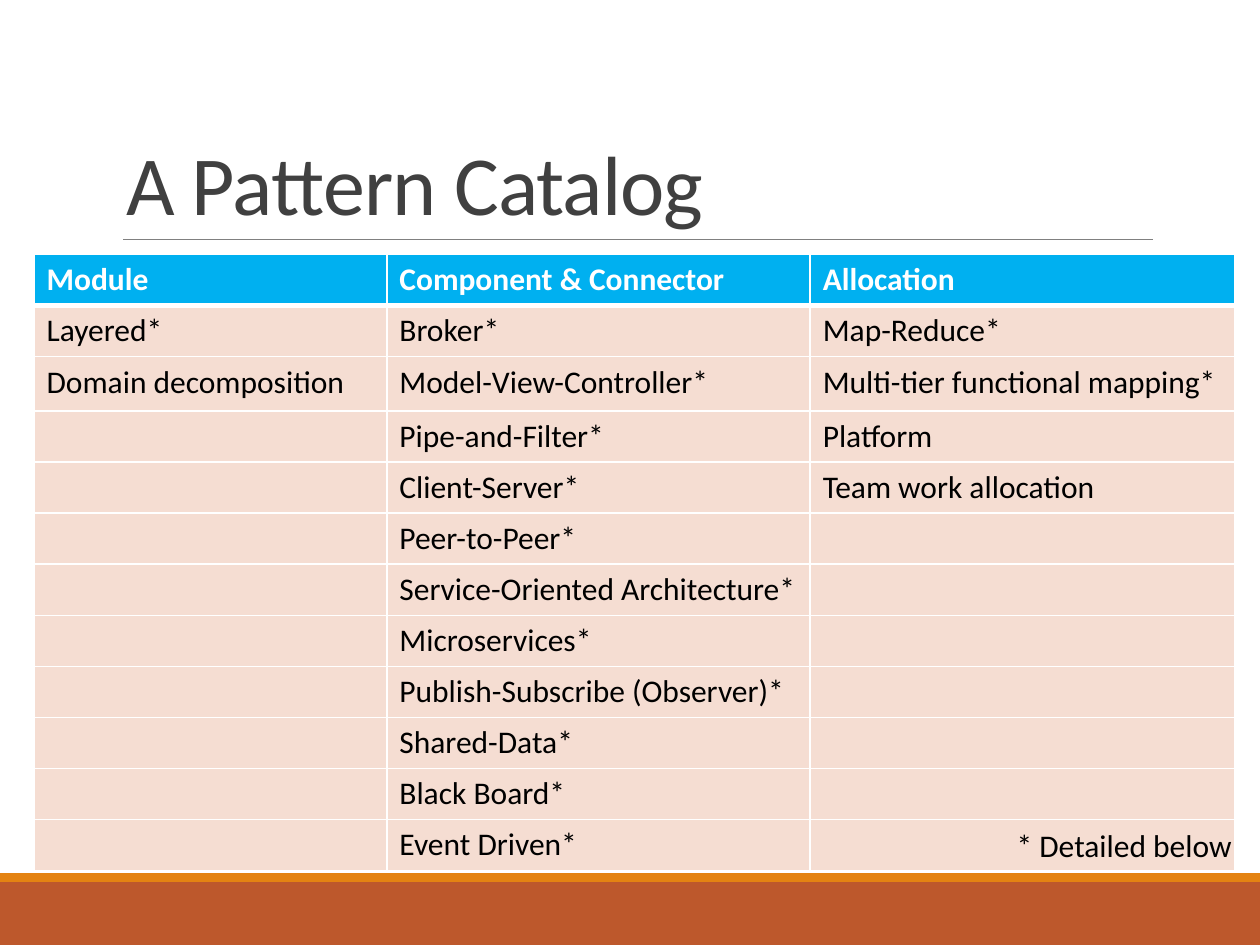
from itertools import zip_longest

from lxml import etree
from pptx import Presentation
from pptx.dml.color import RGBColor
from pptx.enum.shapes import MSO_CONNECTOR, MSO_SHAPE
from pptx.enum.text import MSO_ANCHOR, MSO_AUTO_SIZE
from pptx.oxml.ns import qn
from pptx.util import Inches, Pt

RECT = MSO_SHAPE.RECTANGLE
LINE = MSO_CONNECTOR.STRAIGHT
LOW = MSO_ANCHOR.BOTTOM
GROW = MSO_AUTO_SIZE.SHAPE_TO_FIT_TEXT

TITLE = "A Pattern Catalog"
NOTE = "* Detailed below"
GROUPS = {
    "Module": ["Layered*", "Domain decomposition"],
    "Component & Connector": [
        "Broker*", "Model-View-Controller*", "Pipe-and-Filter*",
        "Client-Server*", "Peer-to-Peer*", "Service-Oriented Architecture*",
        "Microservices*", "Publish-Subscribe (Observer)*", "Shared-Data*",
        "Black Board*", "Event Driven*",
    ],
    "Allocation": [
        "Map-Reduce*", "Multi-tier functional mapping*", "Platform",
        "Team work allocation",
    ],
}
WIDTHS = [2.8, 3.36, 3.37]
ROW, TALL = 0.4, 0.43
BANDS = [(7, 0.5, "rust"), (6.93, 0.07, "amber")]
HEX = {
    "rust": "BD582C", "amber": "E48312", "rule": "808080", "title": "404040",
    "head": "00B0F0", "body": "F5DDD2", "white": "FFFFFF", "black": "000000",
}


def tint(name):
    return RGBColor.from_string(HEX[name])


def write(frame, text, size=18, color="black", bold=False, space=None, track=None):
    para = frame.paragraphs[0]
    if space:
        para.line_spacing = space
    run = para.add_run()
    run.text = text
    font = run.font
    font.name, font.size, font.bold = "Calibri", Pt(size), bold
    font.color.rgb = tint(color)
    if track:
        run._r.get_or_add_rPr().set("spc", str(track))


def edge(cell, side, width):
    props = cell._tc.get_or_add_tcPr()
    line = etree.SubElement(props, qn("a:ln" + side), w=str(Pt(width)))
    fill = etree.SubElement(line, qn("a:solidFill"))
    etree.SubElement(fill, qn("a:srgbClr"), val=HEX["white"])


def add_bands(slide):
    for top, high, color in BANDS:
        band = slide.shapes.add_shape(RECT, 0, Inches(top), Inches(10), Inches(high))
        band.shadow.inherit = False
        band.fill.solid()
        band.fill.fore_color.rgb = tint(color)
        band.line.fill.background()


def add_rule(slide):
    rule = slide.shapes.add_connector(
        LINE, Inches(0.98), Inches(1.9), Inches(9.15), Inches(1.9))
    rule.line.color.rgb = tint("rule")
    rule.line.width = Pt(0.5)
    etree.SubElement(rule._element.spPr, qn("a:effectLst"))


def add_title(slide):
    title = slide.shapes.title
    title.left, title.top = Inches(0.9), Inches(0.31)
    title.width, title.height = Inches(8.25), Inches(1.59)
    title.text_frame.vertical_anchor = LOW
    write(title.text_frame, TITLE, size=48, color="title", space=0.85, track=-50)
    title.text_frame.paragraphs[0].alignment = 1


def add_grid(slide):
    rows = [list(GROUPS), *zip_longest(*GROUPS.values(), fillvalue="")]
    highs = [TALL if r == 2 else ROW for r in range(len(rows))]
    grid = slide.shapes.add_table(
        len(rows), len(WIDTHS), Inches(0.27), Inches(2.02),
        Inches(sum(WIDTHS)), Inches(sum(highs))).table
    for col, wide in zip(grid.columns, WIDTHS):
        col.width = Inches(wide)
    for r, (row, high) in enumerate(zip(rows, highs)):
        grid.rows[r].height = Inches(high)
        head = r == 0
        for c, text in enumerate(row):
            cell = grid.cell(r, c)
            for side in "LRTB":
                thick = (head and side == "B") or (r == 1 and side == "T")
                edge(cell, side, 3 if thick else 1)
            cell.fill.solid()
            cell.fill.fore_color.rgb = tint("head" if head else "body")
            if text:
                write(cell.text_frame, text, bold=head,
                      color="white" if head else "black")


def add_note(slide):
    box = slide.shapes.add_textbox(
        Inches(7.97), Inches(6.51), Inches(2.03), Inches(0.4))
    box.text_frame.word_wrap = False
    box.text_frame.auto_size = GROW
    write(box.text_frame, NOTE)


def main():
    deck = Presentation()
    deck.slide_width, deck.slide_height = Inches(10), Inches(7.5)
    slide = deck.slides.add_slide(deck.slide_layouts[5])
    add_bands(slide)
    add_rule(slide)
    add_title(slide)
    add_grid(slide)
    add_note(slide)
    deck.save("out.pptx")


if __name__ == "__main__":
    main()
